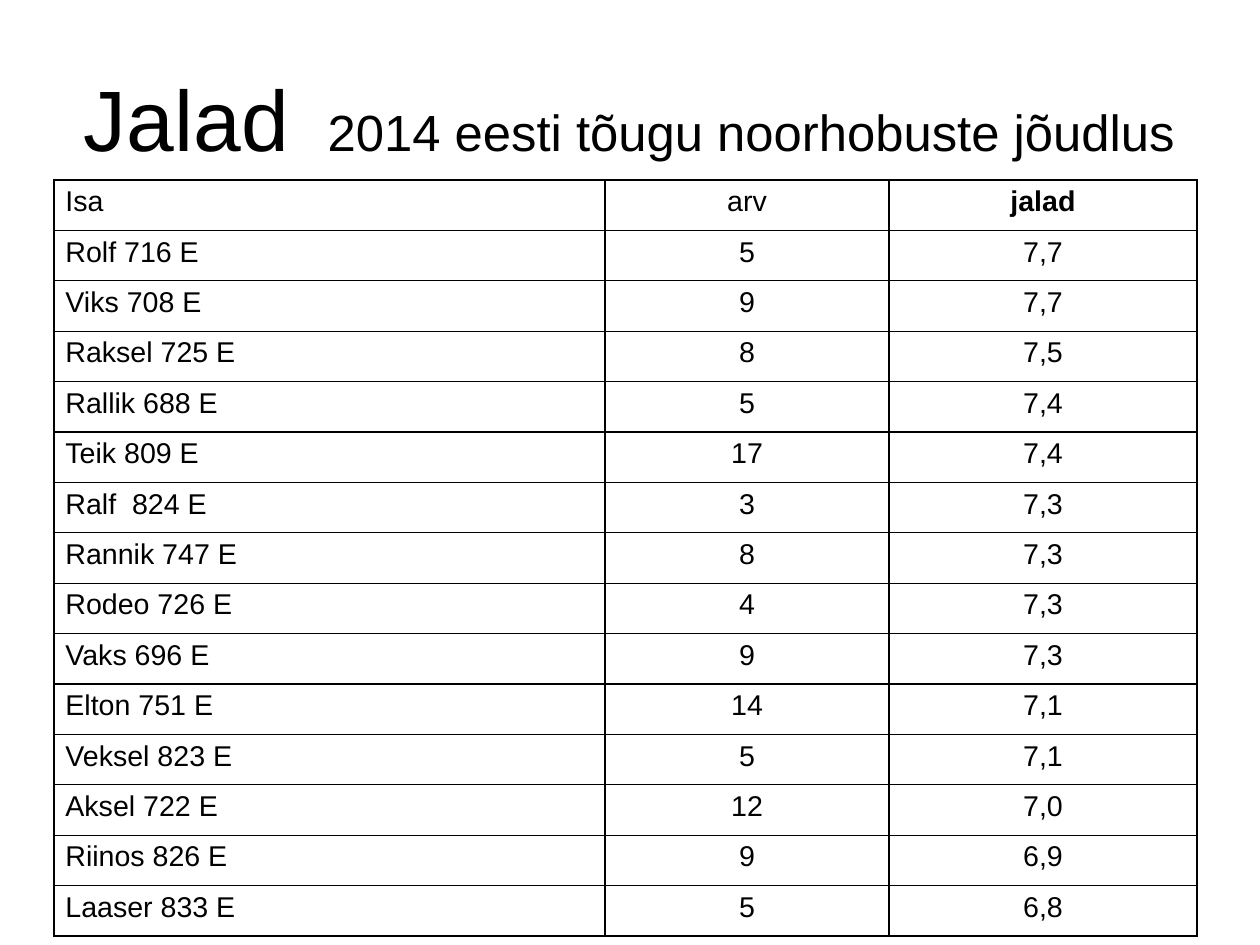
import dataclasses

import pptx
import pptx.dml.color
import pptx.enum.text
import pptx.oxml
import pptx.oxml.ns
import pptx.util

EMU_PER_PX = 8000
ALIGN = pptx.enum.text.PP_ALIGN
ANCHOR = pptx.enum.text.MSO_ANCHOR


@dataclasses.dataclass(frozen=True)
class Theme:
    font: str = "Arial"
    ink: str = "000000"
    paper: str = "FFFFFF"
    title_size: int = 54
    gap_size: int = 44
    subtitle_size: int = 32
    table_size: int = 18
    border_width: int = 1


THEME = Theme()

HEADER = ("Isa", "arv", "jalad")
SIRES = [
    ("Rolf 716 E", "5", "7,7"),
    ("Viks 708 E", "9", "7,7"),
    ("Raksel 725 E", "8", "7,5"),
    ("Rallik 688 E", "5", "7,4"),
    ("Teik 809 E", "17", "7,4"),
    ("Ralf  824 E", "3", "7,3"),
    ("Rannik 747 E", "8", "7,3"),
    ("Rodeo 726 E", "4", "7,3"),
    ("Vaks 696 E", "9", "7,3"),
    ("Elton 751 E", "14", "7,1"),
    ("Veksel 823 E", "5", "7,1"),
    ("Aksel 722 E", "12", "7,0"),
    ("Riinos 826 E", "9", "6,9"),
    ("Laaser 833 E", "5", "6,8"),
]
COLUMN_WIDTHS = (551, 284, 308)
COLUMN_ALIGNMENTS = (ALIGN.LEFT, ALIGN.CENTER, ALIGN.CENTER)


def px(length):
    return pptx.util.Emu(length * EMU_PER_PX)


def set_attributes(target, values):
    for name, value in values.items():
        setattr(target, name, value)


def add_run(paragraph, text, size, bold=False):
    run = paragraph.add_run()
    run.text = text
    set_attributes(run.font, {"name": THEME.font, "size": pptx.util.Pt(size), "bold": bold})
    run.font.color.rgb = pptx.dml.color.RGBColor.from_string(THEME.ink)


def add_title(slide, left, top, width, height, runs):
    frame = slide.shapes.add_textbox(px(left), px(top), px(width), px(height)).text_frame
    set_attributes(frame, {
        "word_wrap": True,
        "vertical_anchor": ANCHOR.MIDDLE,
        "margin_left": 0,
        "margin_right": 0,
        "margin_top": 0,
        "margin_bottom": 0,
    })
    paragraph = frame.paragraphs[0]
    paragraph.alignment = ALIGN.CENTER
    for text, size in runs:
        add_run(paragraph, text, size)


def add_borders(cell):
    properties = cell._tc.get_or_add_tcPr()
    width = pptx.util.Pt(THEME.border_width)
    for position, side in enumerate(("lnL", "lnR", "lnT", "lnB")):
        border = pptx.oxml.parse_xml(
            f'<a:{side} {pptx.oxml.ns.nsdecls("a")} w="{width}"><a:solidFill>'
            f'<a:srgbClr val="{THEME.ink}"/></a:solidFill></a:{side}>'
        )
        properties.insert(position, border)


def fill_cell(cell, text, alignment, bold):
    cell.fill.solid()
    cell.fill.fore_color.rgb = pptx.dml.color.RGBColor.from_string(THEME.paper)
    add_borders(cell)
    paragraph = cell.text_frame.paragraphs[0]
    paragraph.alignment = alignment
    add_run(paragraph, text, THEME.table_size, bold)


def add_score_table(slide, left, top, height, rows):
    table = slide.shapes.add_table(
        len(rows), len(COLUMN_WIDTHS),
        px(left), px(top), px(sum(COLUMN_WIDTHS)), px(height),
    ).table
    set_attributes(table, {"first_row": False, "horz_banding": False})
    for column, width in zip(table.columns, COLUMN_WIDTHS):
        column.width = px(width)
    for row_index, texts in enumerate(rows):
        for column_index, text in enumerate(texts):
            bold = row_index == 0 and column_index == len(HEADER) - 1
            fill_cell(table.cell(row_index, column_index), text,
                      COLUMN_ALIGNMENTS[column_index], bold)


def main():
    presentation = pptx.Presentation()
    set_attributes(presentation, {"slide_width": px(1260), "slide_height": px(945)})
    slide = presentation.slides.add_slide(presentation.slide_layouts[6])

    # Heading
    add_title(slide, 63, 38, 1134, 158, [
        ("Jalad", THEME.title_size),
        ("  ", THEME.gap_size),
        ("2014 eesti tõugu noorhobuste jõudlus", THEME.subtitle_size),
    ])

    # Leg scores by sire
    add_score_table(slide, 54, 180, 756, [HEADER, *SIRES])

    presentation.save("out.pptx")


if __name__ == "__main__":
    main()
